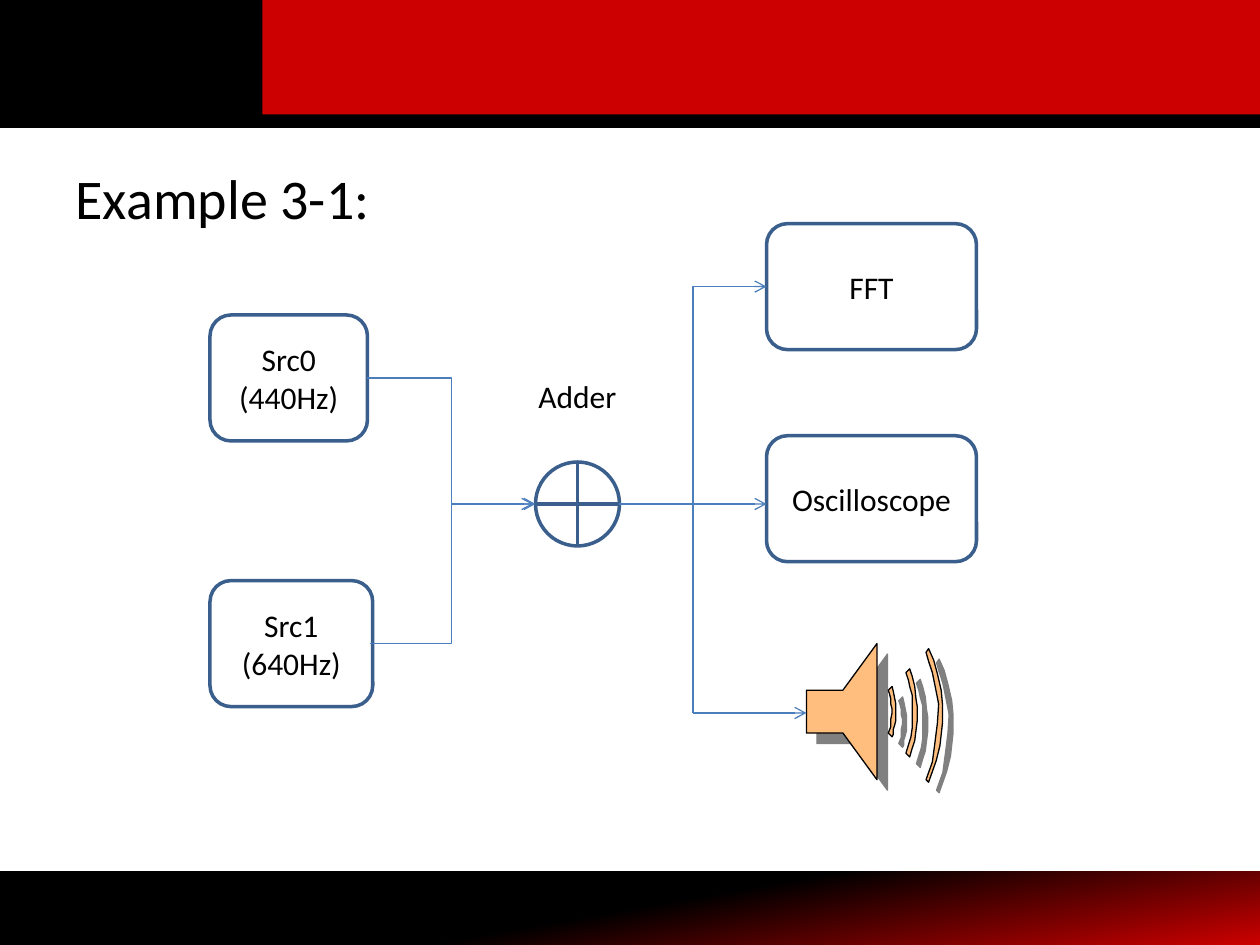
from lxml.etree import SubElement
from pptx import Presentation
from pptx.dml.color import RGBColor
from pptx.enum.shapes import MSO_CONNECTOR as Connector, MSO_SHAPE as Shape
from pptx.enum.text import MSO_ANCHOR as Anchor, PP_ALIGN as Align
from pptx.oxml.ns import qn
from pptx.util import Inches, Pt

BLACK, RED, OUTLINE, WIRE = "000000", "CC0000", "3A5F8C", "4B7EBC"
SPEAKER_FILL, SPEAKER_SHADOW = "FFBE7D", "808080"

# Speaker outlines in hundredths of an inch from the speaker's top left corner
SPEAKER = [
    [(0, 37), (29, 37), (56, 0), (56, 108), (29, 71), (0, 71)],
    [(65, 37), (68, 34), (69, 38), (70, 43), (71, 48), (71, 58), (71, 61), (70, 65),
     (69, 68), (69, 72), (68, 74), (65, 71), (67, 66), (67, 60), (68, 55), (68, 52),
     (67, 48), (67, 44), (66, 40)],
    [(82, 20), (84, 26), (86, 34), (87, 44), (88, 50), (88, 61), (87, 69), (86, 77),
     (84, 83), (82, 90), (79, 87), (83, 74), (84, 67), (84, 49), (84, 41), (82, 34),
     (81, 29), (79, 23)],
    [(95, 7), (97, 4), (101, 13), (104, 24), (107, 37), (108, 48), (108, 63), (106, 81),
     (103, 93), (97, 110), (95, 108), (100, 94), (102, 79), (104, 63), (105, 48),
     (103, 38), (100, 23), (97, 14)],
]


def color(hex_string):
    return RGBColor.from_string(hex_string)


class Diagram:
    """Draws on one slide; lengths are cells of a grid of 120 columns by 90 rows."""
    font_name = "Calibri"
    text_size = 18

    def __init__(self, presentation):
        self.cell = presentation.slide_width / 120
        self.slide = presentation.slides.add_slide(presentation.slide_layouts[1])
        self.shapes = self.slide.shapes

    def grid(self, *cells):
        return [round(cell * self.cell) for cell in cells]

    def set_text(self, frame, lines, size=text_size, align=Align.CENTER):
        frame.word_wrap = True
        frame.text = "\n".join(lines)
        for paragraph in frame.paragraphs:
            paragraph.alignment = align
            paragraph.space_before = Pt(0)
            paragraph.font.name = self.font_name
            paragraph.font.size = Pt(size)
            paragraph.font.color.rgb = color(BLACK)

    def body(self, area, text):
        self.shapes.title.element.getparent().remove(self.shapes.title.element)
        body = self.slide.placeholders[1]
        body.left, body.top, body.width, body.height = self.grid(*area)
        self.set_text(body.text_frame, [text], 32, Align.LEFT)
        properties = body.text_frame.paragraphs[0]._p.get_or_add_pPr()
        properties.set("marL", "0")
        properties.set("indent", "0")
        bullet = SubElement(properties, qn("a:buNone"))
        properties.insert_element_before(bullet, "a:tabLst", "a:defRPr", "a:extLst")

    def shape(self, kind, area, fill=None, line=None):
        shape = self.shapes.add_shape(kind, *self.grid(*area))
        shape.shadow.inherit = False
        if fill:
            shape.fill.solid()
            shape.fill.fore_color.rgb = color(fill)
        else:
            shape.fill.background()
        if line:
            shape.line.color.rgb = color(line)
            shape.line.width = Pt(2)
        else:
            shape.line.fill.background()
        return shape

    def gradient_band(self, area, start, end):
        fill = self.shape(Shape.RECTANGLE, area).fill
        fill.gradient()
        fill.gradient_angle = 280
        for stop, position, hex_string in zip(fill.gradient_stops, (0.5, 1), (start, end)):
            stop.position = position
            stop.color.rgb = color(hex_string)

    def block(self, area, *lines):
        block = self.shape(Shape.ROUNDED_RECTANGLE, area, line=OUTLINE)
        block.text_frame.vertical_anchor = Anchor.MIDDLE
        self.set_text(block.text_frame, lines)

    def label(self, area, text):
        self.set_text(self.shapes.add_textbox(*self.grid(*area)).text_frame, [text])

    def wire(self, start, end, kind=Connector.STRAIGHT, arrow=True):
        wire = self.shapes.add_connector(kind, *self.grid(*start, *end))
        wire.line.color.rgb = color(WIRE)
        wire.line.width = Pt(0.75)
        if arrow:
            SubElement(wire.line._get_or_add_ln(), qn("a:tailEnd"), type="arrow")
        SubElement(wire._element.spPr, qn("a:effectLst"))

    def speaker(self, left, top):
        first, *waves = SPEAKER
        builder = self.shapes.build_freeform(*first[0], scale=Inches(0.01))
        builder.add_line_segments(first[1:])
        for wave in waves:
            builder.move_to(*wave[0])
            builder.add_line_segments(wave[1:])
        speaker = builder.convert_to_shape(*self.grid(left, top))
        speaker.fill.solid()
        speaker.fill.fore_color.rgb = color(SPEAKER_FILL)
        speaker.line.color.rgb = color(BLACK)
        speaker.line.width = Pt(0.75)
        speaker.shadow.inherit = False
        effects = speaker._element.spPr.find(qn("a:effectLst"))
        shadow = SubElement(effects, qn("a:outerShdw"), dist=str(Pt(8.5)),
                            dir=str(45 * 60000), algn="ctr", rotWithShape="0")
        SubElement(shadow, qn("a:srgbClr"), val=SPEAKER_SHADOW)


def main():
    presentation = Presentation()
    presentation.slide_width, presentation.slide_height = Inches(10), Inches(7.5)
    diagram = Diagram(presentation)

    diagram.gradient_band((0, 83, 120, 7), BLACK, RED)
    diagram.shape(Shape.RECTANGLE, (0, 0, 120, 12), BLACK, BLACK)
    diagram.shape(Shape.RECTANGLE, (25, -0.1, 95, 11), RED)
    diagram.body((6, 15, 108, 65.4), "Example 3-1:")

    diagram.block((20, 30, 15, 12), "Src0", "(440Hz)")
    diagram.block((20, 55.3, 15.5, 12), "Src1", "(640Hz)")
    diagram.block((73, 21.3, 20, 12), "FFT")
    diagram.block((73, 41.5, 20, 12), "Oscilloscope")
    diagram.speaker(76.8, 61.3)
    diagram.shape(Shape.FLOWCHART_OR, (51, 44, 8, 8), line=OUTLINE)
    diagram.label((49.5, 35.3, 11, 4.8), "Adder")

    adder_in, adder_out, branch, axis, speaker_row = 51, 59, 66, 48, 67.9
    diagram.wire((35, 36), (adder_in, axis), Connector.ELBOW)
    diagram.wire((35.2, 61.3), (adder_in - 0.2, axis), Connector.ELBOW)
    diagram.wire((adder_out, axis), (73, 27.3), Connector.ELBOW)
    diagram.wire((adder_out, axis), (73, axis))
    diagram.wire((branch, speaker_row), (76.8, speaker_row))
    diagram.wire((branch, axis), (branch, speaker_row), arrow=False)

    presentation.save("out.pptx")


if __name__ == "__main__":
    main()
